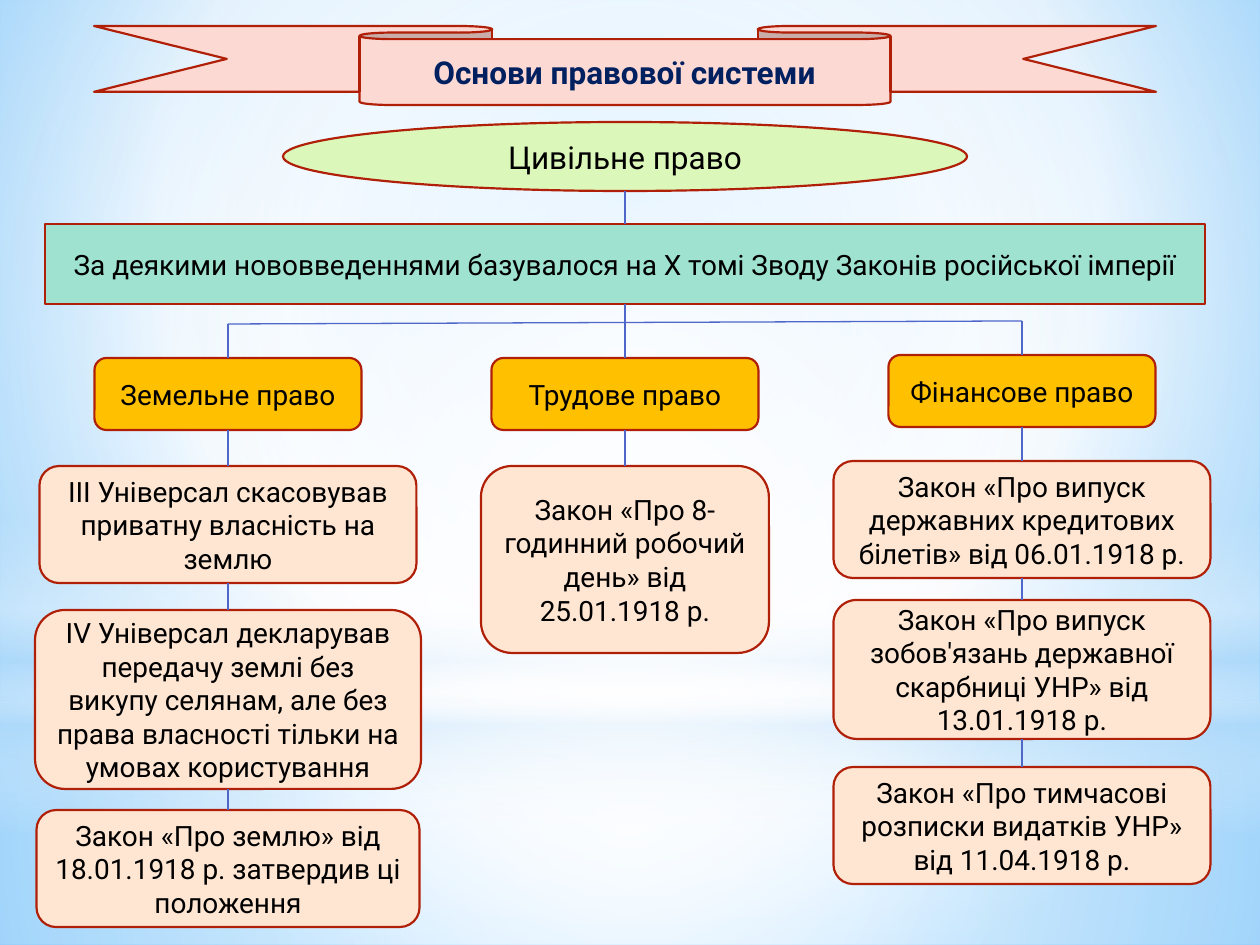
"""Build a slide that charts the foundations of a legal system."""
from itertools import pairwise

from lxml import etree
from pptx import Presentation
from pptx import util as u
from pptx.dml.color import RGBColor
from pptx.enum import shapes, text
from pptx.oxml import ns

PX = 914400 / 126
WIDTH, HEIGHT = 1260, 945
FONT = "Roboto"
BLACK = RGBColor(0x00, 0x00, 0x00)
NAVY = RGBColor(0x00, 0x20, 0x60)
RED = RGBColor(0xB0, 0x1F, 0x07)
BLUE = RGBColor(0x4E, 0x67, 0xC8)
PINK = RGBColor(0xFC, 0xD9, 0xD3)
LIME = RGBColor(0xDC, 0xF7, 0xBA)
MINT = RGBColor(0x9E, 0xE2, 0xCF)
AMBER = RGBColor(0xFF, 0xC0, 0x00)
PEACH = RGBColor(0xFF, 0xE6, 0xD3)
WHITE = RGBColor(0xFF, 0xFF, 0xFF)
SKY = RGBColor(0xB4, 0xDC, 0xFA)
SKY_MID = RGBColor(0x9E, 0xD5, 0xFF)
SKY_DEEP = RGBColor(0x5B, 0xB9, 0xFF)

KIND = shapes.MSO_SHAPE
CENTER = (50, 50, 50, 50)
BACKDROP = [(0, SKY_MID, 100), (60, WHITE, 100), (100, SKY_DEEP, 100)]
LAYERS = [
    (KIND.RECTANGLE, (0, 703, WIDTH, 242), CENTER,
     [(0, WHITE, 91), (37, WHITE, 76), (100, SKY, 79)]),
    (KIND.RECTANGLE, (0, 0, WIDTH, 703), CENTER,
     [(0, WHITE, 89), (48, WHITE, 62), (100, SKY, 79)]),
    (KIND.RECTANGLE, (0, 519, WIDTH, 315), None,
     [(0, WHITE, 0), (29, WHITE, 30), (45, SKY, 40),
      (55, WHITE, 26), (65, SKY, 60), (100, WHITE, 0)]),
    (KIND.OVAL, (0, 220, WIDTH, 703), CENTER,
     [(0, WHITE, 100), (56, WHITE, 0)]),
]

AXIS = 625
BAR_BOTTOM = 304
COLUMNS = [
    (228, 324, [
        (358, 267, 72, "Земельне право"),
        (466, 377, 117, "ІІІ Універсал скасовував приватну власність на землю"),
        (610, 386, 179, "IV Універсал декларував передачу землі без викупу селянам, "
                        "але без права власності тільки на умовах користування"),
        (810, 383, 117, "Закон «Про землю» від 18.01.1918 р. затвердив ці положення"),
    ]),
    (AXIS, BAR_BOTTOM, [
        (358, 267, 72, "Трудове право"),
        (466, 288, 187, "Закон «Про 8- годинний робочий день» від 25.01.1918 р."),
    ]),
    (1022, 321, [
        (355, 267, 72, "Фінансове право"),
        (461, 377, 117, "Закон «Про випуск державних кредитових білетів» від 06.01.1918 р."),
        (600, 377, 139, "Закон «Про випуск зобов'язань державної скарбниці УНР» "
                        "від 13.01.1918 р."),
        (767, 377, 117, "Закон «Про тимчасові розписки видатків УНР» від 11.04.1918 р."),
    ]),
]


def px(value):
    """Turn pixels into EMU."""
    return u.Emu(round(value * PX))


def set_gradient(owner, stops, focus):
    """Swap the solid fill under owner for a radial gradient, or a vertical one without focus."""
    solid = owner.find(".//" + ns.qn("a:solidFill"))
    grad = etree.Element(ns.qn("a:gradFill"), rotWithShape="1")
    stop_list = etree.SubElement(grad, ns.qn("a:gsLst"))
    for position, color, opacity in stops:
        gs = etree.SubElement(stop_list, ns.qn("a:gs"), pos=str(position * 1000))
        clr = etree.SubElement(gs, ns.qn("a:srgbClr"), val=str(color))
        etree.SubElement(clr, ns.qn("a:alpha"), val=str(opacity * 1000))
    if focus:
        radial = etree.SubElement(grad, ns.qn("a:path"), path="circle")
        sides = {side: str(value * 1000) for side, value in zip("ltrb", focus)}
        etree.SubElement(radial, ns.qn("a:fillToRect"), **sides)
    else:
        etree.SubElement(grad, ns.qn("a:lin"), ang="5400000", scaled="0")
    solid.getparent().replace(solid, grad)


def add_shape(slide, kind, box, color):
    """Add a flat shape with a solid fill."""
    sp = slide.shapes.add_shape(kind, *map(px, box))
    sp.shadow.inherit = False
    sp.fill.solid()
    sp.fill.fore_color.rgb = color
    return sp


def add_layer(slide, kind, box, focus, stops):
    """Add a translucent gradient layer of the backdrop."""
    sp = add_shape(slide, kind, box, WHITE)
    sp.line.fill.background()
    set_gradient(sp.element.spPr, stops, focus)


def write(sp, words, size, color=BLACK, bold=False):
    """Write one centred paragraph into a shape."""
    tf = sp.text_frame
    tf.word_wrap = True
    tf.vertical_anchor = text.MSO_ANCHOR.MIDDLE
    p = tf.paragraphs[0]
    p.text = words
    p.alignment = text.PP_ALIGN.CENTER
    p.font.name = FONT
    p.font.size = u.Pt(size)
    p.font.bold = bold
    p.font.color.rgb = color


def add_box(slide, kind, box, color, words="", size=16):
    """Add a red-outlined shape with optional text."""
    sp = add_shape(slide, kind, box, color)
    sp.line.color.rgb = RED
    sp.line.width = u.Pt(1.25)
    if words:
        write(sp, words, size)


def place_title(slide, box, words):
    """Put the title placeholder on top of what is drawn so far."""
    title = slide.shapes.title
    title.left, title.top, title.width, title.height = map(px, box)
    write(title, words, 18, NAVY, True)
    title.text_frame.auto_size = text.MSO_AUTO_SIZE.NONE
    title.element.getparent().append(title.element)


def add_line(slide, x1, y1, x2, y2):
    """Add a thin blue connector."""
    line = slide.shapes.add_connector(
        shapes.MSO_CONNECTOR.STRAIGHT, *map(px, (x1, y1, x2, y2)))
    line.line.color.rgb = BLUE
    line.line.width = u.Pt(0.75)
    etree.SubElement(line.element.spPr, ns.qn("a:effectLst"))


def add_column(slide, center, start, boxes):
    """Add a branch of boxes linked from top to bottom."""
    for i, (top, width, height, words) in enumerate(boxes):
        add_box(slide, KIND.ROUNDED_RECTANGLE, (center - width / 2, top, width, height),
                PEACH if i else AMBER, words)
    add_line(slide, center, start, center, boxes[0][0])
    for (top, _, height, _), (next_top, *_) in pairwise(boxes):
        add_line(slide, center, top + height, center, next_top)


def main():
    """Build and save the slide."""
    prs = Presentation()
    prs.slide_width, prs.slide_height = px(WIDTH), px(HEIGHT)
    slide = prs.slides.add_slide(prs.slide_layouts[5])
    slide.background.fill.solid()
    set_gradient(slide.element, BACKDROP, (20, 10, 20, 60))
    for layer in LAYERS:
        add_layer(slide, *layer)

    add_box(slide, KIND.DOWN_RIBBON, (94, 26, 1062, 79), PINK)
    place_title(slide, (359, 39, 531, 66), "Основи правової системи")
    add_box(slide, KIND.OVAL, (283, 122, 684, 69), LIME, "Цивільне право", 18)
    add_box(slide, KIND.RECTANGLE, (45, 224, 1160, 80), MINT,
            "За деякими нововведеннями базувалося на Х томі Зводу Законів російської імперії")
    add_line(slide, AXIS, 191, AXIS, 224)
    (left, left_y, _), _, (right, right_y, _) = COLUMNS
    add_line(slide, left, left_y, right, right_y)
    for column in COLUMNS:
        add_column(slide, *column)
    prs.save("out.pptx")


if __name__ == "__main__":
    main()
